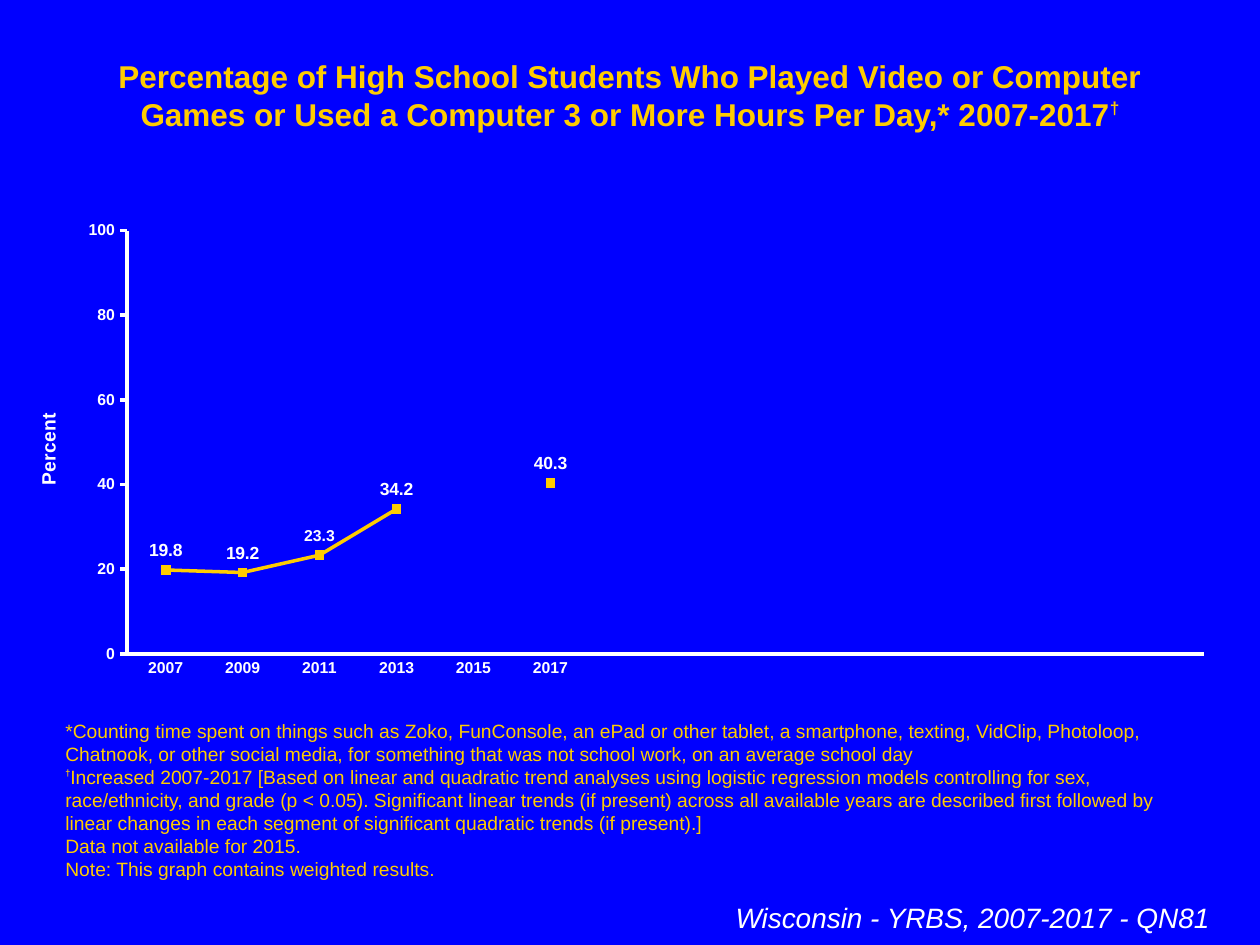
"""Build the slide on students' daily video game and computer use, 2007-2017."""
from lxml import etree
from pptx import Presentation
from pptx.chart.data import CategoryChartData
from pptx.dml.color import RGBColor
from pptx.enum.chart import XL_CHART_TYPE, XL_LABEL_POSITION, XL_MARKER_STYLE, XL_TICK_MARK
from pptx.enum.text import MSO_ANCHOR, MSO_AUTO_SIZE, PP_ALIGN
from pptx.oxml.ns import qn
from pptx.util import Inches, Pt

BLUE = RGBColor(0x00, 0x00, 0xFF)
GOLD = RGBColor(0xFF, 0xCC, 0x00)
WHITE = RGBColor(0xFF, 0xFF, 0xFF)


def style(font, size, color, bold=False):
    font.name = "Arial"
    font.size = Pt(size)
    font.bold = bold
    font.color.rgb = color


def add_dagger(paragraph, size, raise_percent):
    dagger = paragraph.add_run()
    dagger.text = "†"
    dagger.font.size = Pt(size)
    dagger.font.bold = True
    dagger._r.get_or_add_rPr().set("baseline", str(raise_percent * 1000))


prs = Presentation()
prs.slide_width, prs.slide_height = Inches(10), Inches(7.5)
slide = prs.slides.add_slide(prs.slide_layouts[5])
slide.background.fill.solid()
slide.background.fill.fore_color.rgb = BLUE

title = slide.shapes.title
title.left, title.top, title.width, title.height = Inches(0.5), Inches(0.4), Inches(9), Inches(0.4)
title.text_frame.word_wrap = True
title.text_frame.auto_size = MSO_AUTO_SIZE.SHAPE_TO_FIT_TEXT
title.text_frame.vertical_anchor = MSO_ANCHOR.TOP
heading = title.text_frame.paragraphs[0]
heading.alignment = PP_ALIGN.CENTER
style(heading.font, 18, GOLD, True)
heading.add_run().text = (
    "Percentage of High School Students Who Played Video or Computer Games "
    "or Used a Computer 3 or More Hours Per Day,* 2007-2017"
)
add_dagger(heading, 17, 40)

footnotes = [
    "*Counting time spent on things such as Zoko, FunConsole, an ePad or other tablet, "
    "a smartphone, texting, VidClip, Photoloop, Chatnook, or other social media, for something "
    "that was not school work, on an average school day",
    "†Increased 2007-2017 [Based on linear and quadratic trend analyses using logistic "
    "regression models controlling for sex, race/ethnicity, and grade (p < 0.05). Significant "
    "linear trends (if present) across all available years are described first followed by "
    "linear changes in each segment of significant quadratic trends (if present).]",
    "Data not available for 2015.",
    "Note: This graph contains weighted results.",
]
notes_frame = slide.shapes.add_textbox(
    Inches(0.42), Inches(6.75), Inches(9.17), Inches(0.29)).text_frame
notes_frame.word_wrap = True
notes_frame.auto_size = MSO_AUTO_SIZE.SHAPE_TO_FIT_TEXT
notes_frame.vertical_anchor = MSO_ANCHOR.BOTTOM
for index, footnote in enumerate(footnotes):
    paragraph = notes_frame.add_paragraph() if index else notes_frame.paragraphs[0]
    style(paragraph.font, 11, GOLD)
    if footnote.startswith("†"):
        add_dagger(paragraph, 9, 50)
    paragraph.add_run().text = footnote.removeprefix("†")

survey_frame = slide.shapes.add_textbox(
    Inches(0.42), Inches(7.1), Inches(9.28), Inches(0.37)).text_frame
survey_frame.word_wrap = True
survey_frame.auto_size = MSO_AUTO_SIZE.SHAPE_TO_FIT_TEXT
survey = survey_frame.paragraphs[0]
survey.text = "Wisconsin - YRBS, 2007-2017 - QN81"
survey.alignment = PP_ALIGN.RIGHT
style(survey.font, 16, WHITE)
survey.font.italic = True

blank_years = 8
data = CategoryChartData(number_format="#,##0.0")
data.categories = [str(year) for year in range(2007, 2018, 2)] + [""] * blank_years
data.add_series("Series 1", [19.8, 19.2, 23.3, 34.2, None, 40.3] + [None] * blank_years)
chart = slide.shapes.add_chart(
    XL_CHART_TYPE.LINE_MARKERS, Inches(0.25), Inches(1.67), Inches(9.5), Inches(4), data).chart
chart.has_title = False
chart.has_legend = False
style(chart.font, 18, WHITE)

for axis, tick in ((chart.category_axis, XL_TICK_MARK.NONE),
                   (chart.value_axis, XL_TICK_MARK.OUTSIDE)):
    axis.major_tick_mark = tick
    axis.minor_tick_mark = XL_TICK_MARK.NONE
    axis.has_major_gridlines = False
    style(axis.tick_labels.font, 9, WHITE, True)
    axis.format.line.color.rgb = WHITE
    axis.format.line.width = Pt(2)

percent_axis = chart.value_axis
percent_axis.minimum_scale, percent_axis.maximum_scale = 0, 100
percent_axis.major_unit = 20
percent_axis.tick_labels.number_format = "#,##0"
percent_axis.tick_labels.number_format_is_linked = False
percent_title = percent_axis.axis_title.text_frame.paragraphs[0]
percent_title.text = "Percent"
style(percent_title.font, 11, WHITE, True)

plot = chart.plots[0]
plot.vary_by_categories = False
students = plot.series[0]
students.smooth = False
students.format.line.color.rgb = GOLD
students.format.line.width = Pt(2)
students.marker.style = XL_MARKER_STYLE.SQUARE
students.marker.size = 5
students.marker.format.fill.solid()
students.marker.format.fill.fore_color.rgb = GOLD
students.marker.format.line.color.rgb = GOLD

labels = students.data_labels
labels.show_value = True
labels.position = XL_LABEL_POSITION.ABOVE
labels.number_format = "#,##0.0"
labels.number_format_is_linked = False
style(labels.font, 10, WHITE, True)
label_2011 = students.points[2].data_label
style(label_2011.font, 9, WHITE, True)
label_2011.position = XL_LABEL_POSITION.ABOVE

plot_area = chart._chartSpace.chart.plotArea
for automatic in plot_area.findall(qn("c:layout")):
    plot_area.remove(automatic)
layout = etree.Element(qn("c:layout"))
plot_area.insert(0, layout)
manual = etree.SubElement(layout, qn("c:manualLayout"))
for tag, value in (("layoutTarget", "inner"), ("xMode", "edge"), ("yMode", "edge"),
                   ("x", "0.08"), ("y", "0.04"), ("w", "0.9"), ("h", "0.84")):
    etree.SubElement(manual, qn(f"c:{tag}")).set("val", value)

prs.save("out.pptx")
